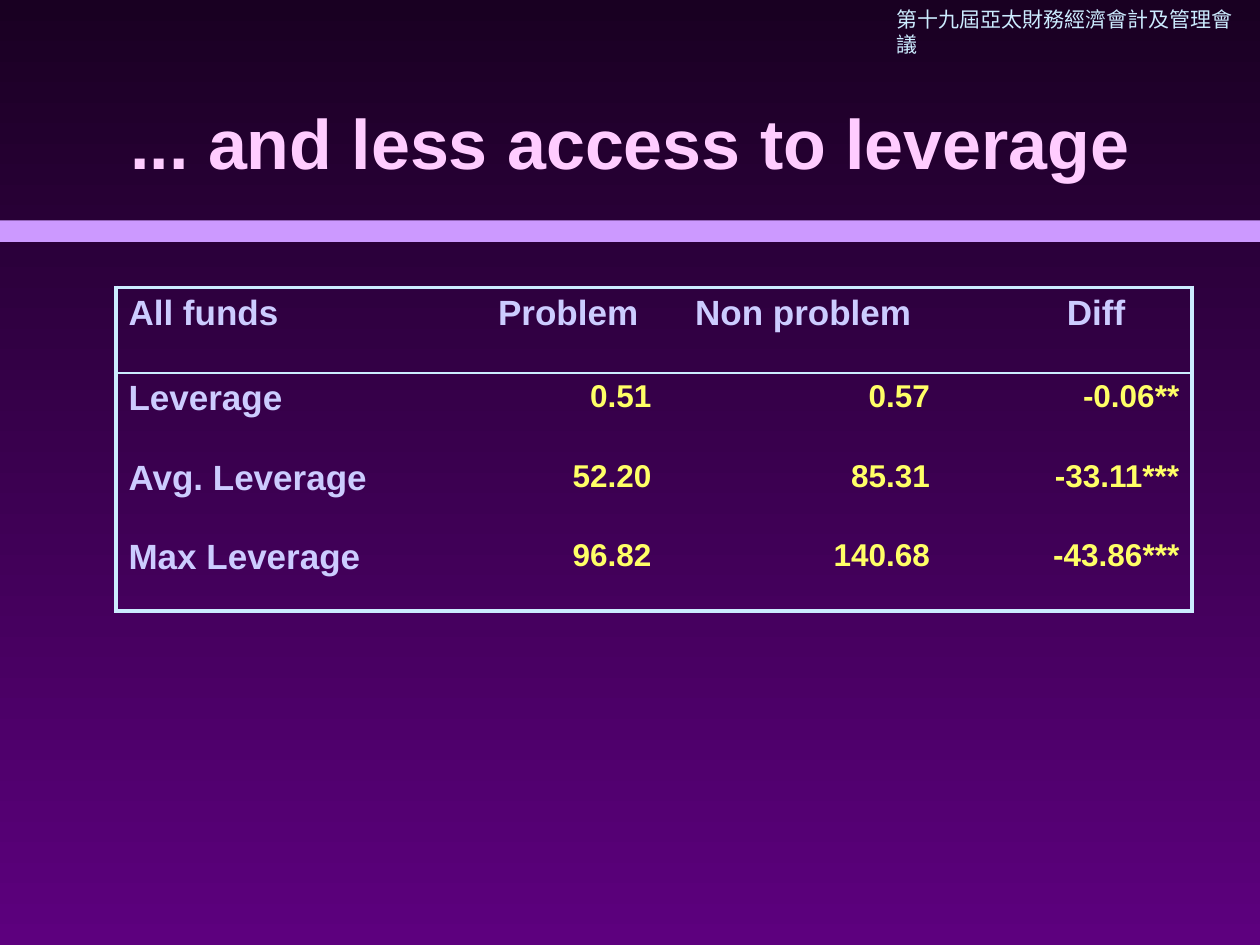
import lxml.etree
import pptx
import pptx.dml.color
import pptx.enum.shapes
import pptx.enum.text
import pptx.oxml.ns
import pptx.util
from pptx.util import Inches

RGBColor = pptx.dml.color.RGBColor
ALIGN = pptx.enum.text.PP_ALIGN
ANCHOR = pptx.enum.text.MSO_ANCHOR

NIGHT = RGBColor(0x19, 0x00, 0x22)
PURPLE = RGBColor(0x5D, 0x00, 0x7E)
LILAC = RGBColor(0xCC, 0x99, 0xFF)
PALE_BLUE = RGBColor(0xCC, 0xEC, 0xFF)
PINK = RGBColor(0xFF, 0xCC, 0xFF)
LAVENDER = RGBColor(0xCC, 0xCC, 0xFF)
YELLOW = RGBColor(0xFF, 0xFF, 0x66)

OUTER_WIDTH = 2.25
HEADER_WIDTH = 1
COLUMN_WIDTHS = [2.83, 1.52, 2.21, 1.98]
ROW_HEIGHTS = [0.68, 0.63, 0.63, 0.63]
ROWS = [
    ["All funds", "Problem", "Non problem", "Diff"],
    ["Leverage", "0.51", "0.57", "-0.06**"],
    ["Avg. Leverage", "52.20", "85.31", "-33.11***"],
    ["Max Leverage", "96.82", "140.68", "-43.86***"],
]


def write_text(text_frame, text, size, color, font="Arial", bold=True, align=ALIGN.LEFT):
    """Write one formatted paragraph into a text frame."""
    paragraph = text_frame.paragraphs[0]
    paragraph.alignment = align
    run = paragraph.add_run()
    run.text = text
    run.font.name = font
    run.font.size = pptx.util.Pt(size)
    run.font.bold = bold
    run.font.color.rgb = color


def set_borders(cell, widths):
    """Draw the cell borders named in widths and clear the other sides."""
    properties = cell._tc.get_or_add_tcPr()
    qualified = pptx.oxml.ns.qn
    for index, side in enumerate(["L", "R", "T", "B"]):
        line = lxml.etree.Element(qualified(f"a:ln{side}"))
        if side in widths:
            line.set("w", str(pptx.util.Pt(widths[side])))
            fill = lxml.etree.SubElement(line, qualified("a:solidFill"))
            lxml.etree.SubElement(fill, qualified("a:srgbClr"), val=str(PALE_BLUE))
        else:
            lxml.etree.SubElement(line, qualified("a:noFill"))
        properties.insert(index, line)


def border_widths(row, column):
    """Return the visible border widths of the cell at a row and column."""
    widths = {}
    if row == 0:
        widths.update(T=OUTER_WIDTH, B=HEADER_WIDTH)
    if row == 1:
        widths["T"] = HEADER_WIDTH
    if row == len(ROWS) - 1:
        widths["B"] = OUTER_WIDTH
    if column == 0:
        widths["L"] = OUTER_WIDTH
    if column == len(COLUMN_WIDTHS) - 1:
        widths["R"] = OUTER_WIDTH
    return widths


def add_background(slide):
    """Fill the slide with the vertical purple gradient."""
    fill = slide.background.fill
    fill.gradient()
    fill.gradient_angle = 270
    for stop, color in zip(fill.gradient_stops, [NIGHT, PURPLE]):
        stop.color.rgb = color


def add_band(slide, left, top, width, height):
    """Add the plain band below the title."""
    shape = slide.shapes.add_shape(
        pptx.enum.shapes.MSO_SHAPE.RECTANGLE, left, top, width, height)
    shape.shadow.inherit = False
    shape.fill.solid()
    shape.fill.fore_color.rgb = LILAC
    shape.line.fill.background()


def add_conference_name(slide, left, top, width, height):
    """Add the conference name in the top corner."""
    text_frame = slide.shapes.add_textbox(left, top, width, height).text_frame
    text_frame.word_wrap = False
    text_frame.margin_right = Inches(0.05)
    write_text(text_frame, "第十九屆亞太財務經濟會計及管理會議", 12, PALE_BLUE,
               font="Times New Roman", bold=False)


def place_title(slide, left, top, width, height):
    """Place and fill the title placeholder."""
    title = slide.shapes.title
    title.left, title.top, title.width, title.height = left, top, width, height
    title.text_frame.vertical_anchor = ANCHOR.MIDDLE
    write_text(title.text_frame, "... and less access to leverage", 40, PINK,
               align=ALIGN.CENTER)


def add_leverage_table(slide, left, top, width, height):
    """Add the table that compares leverage across funds."""
    table = slide.shapes.add_table(
        len(ROWS), len(COLUMN_WIDTHS), left, top, width, height).table
    table.first_row = False
    table.horz_banding = False
    for column, column_width in zip(table.columns, COLUMN_WIDTHS):
        column.width = Inches(column_width)
    for row, row_height in zip(table.rows, ROW_HEIGHTS):
        row.height = Inches(row_height)
    for row_index, texts in enumerate(ROWS):
        for column_index, text in enumerate(texts):
            cell = table.cell(row_index, column_index)
            cell.fill.background()
            set_borders(cell, border_widths(row_index, column_index))
            is_label = row_index == 0 or column_index == 0
            if column_index == 0:
                align = ALIGN.LEFT
            else:
                align = ALIGN.CENTER if row_index == 0 else ALIGN.RIGHT
            write_text(cell.text_frame, text, 20 if is_label else 18,
                       LAVENDER if is_label else YELLOW, align=align)
    table.cell(0, len(COLUMN_WIDTHS) - 1).margin_left = Inches(0.56)


def main():
    """Build and save the presentation."""
    presentation = pptx.Presentation()
    presentation.slide_width = Inches(10)
    presentation.slide_height = Inches(7.5)
    slide = presentation.slides.add_slide(
        presentation.slide_layouts.get_by_name("Title Only"))
    add_background(slide)
    add_band(slide, 0, Inches(1.75), presentation.slide_width, Inches(0.17))
    add_conference_name(slide, Inches(7.02), 0, Inches(2.98), Inches(0.3))
    place_title(slide, Inches(0.75), Inches(0.5), Inches(8.5), Inches(1.25))
    add_leverage_table(slide, Inches(0.92), Inches(2.28),
                       Inches(sum(COLUMN_WIDTHS)), Inches(sum(ROW_HEIGHTS)))
    presentation.save("out.pptx")


if __name__ == "__main__":
    main()
